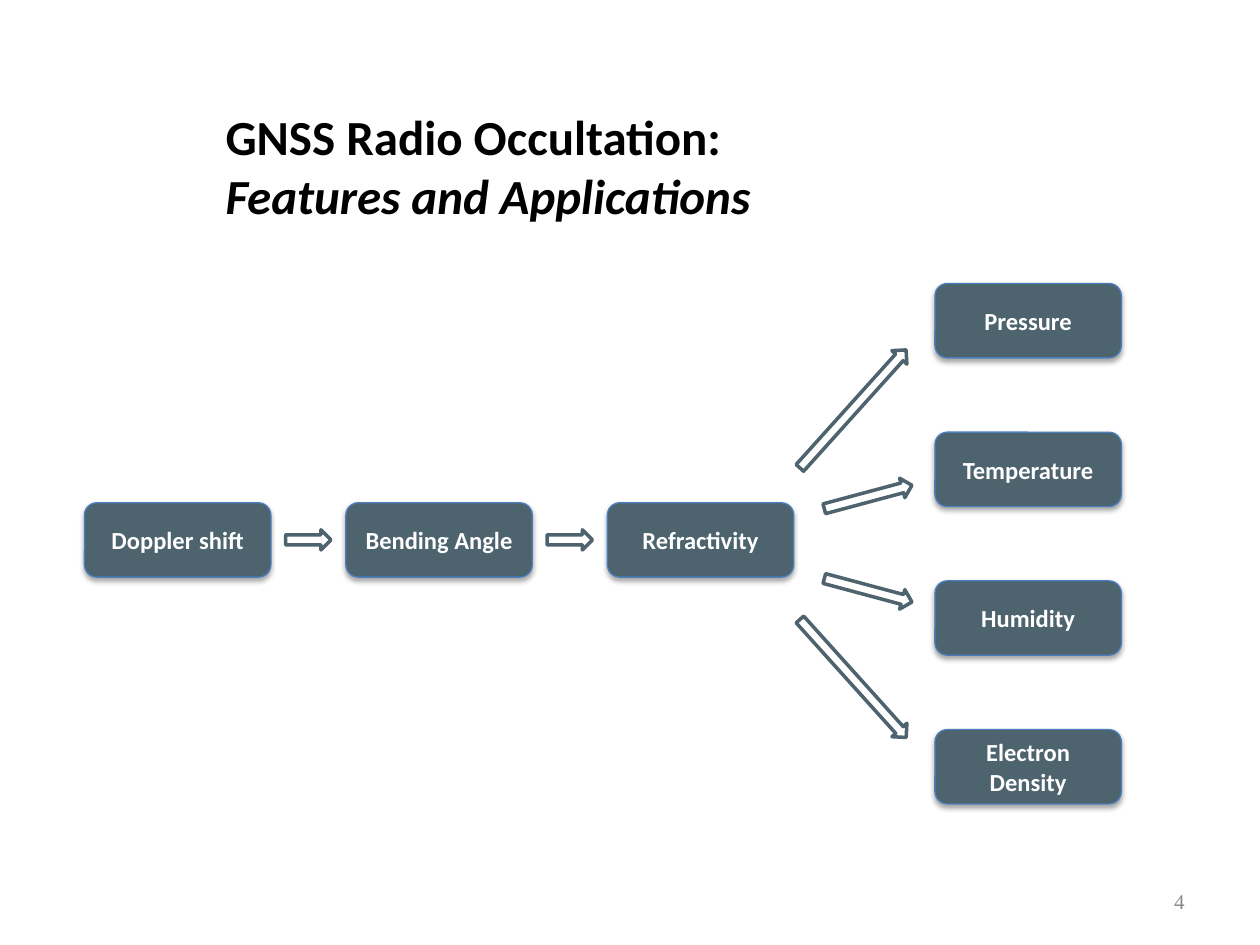
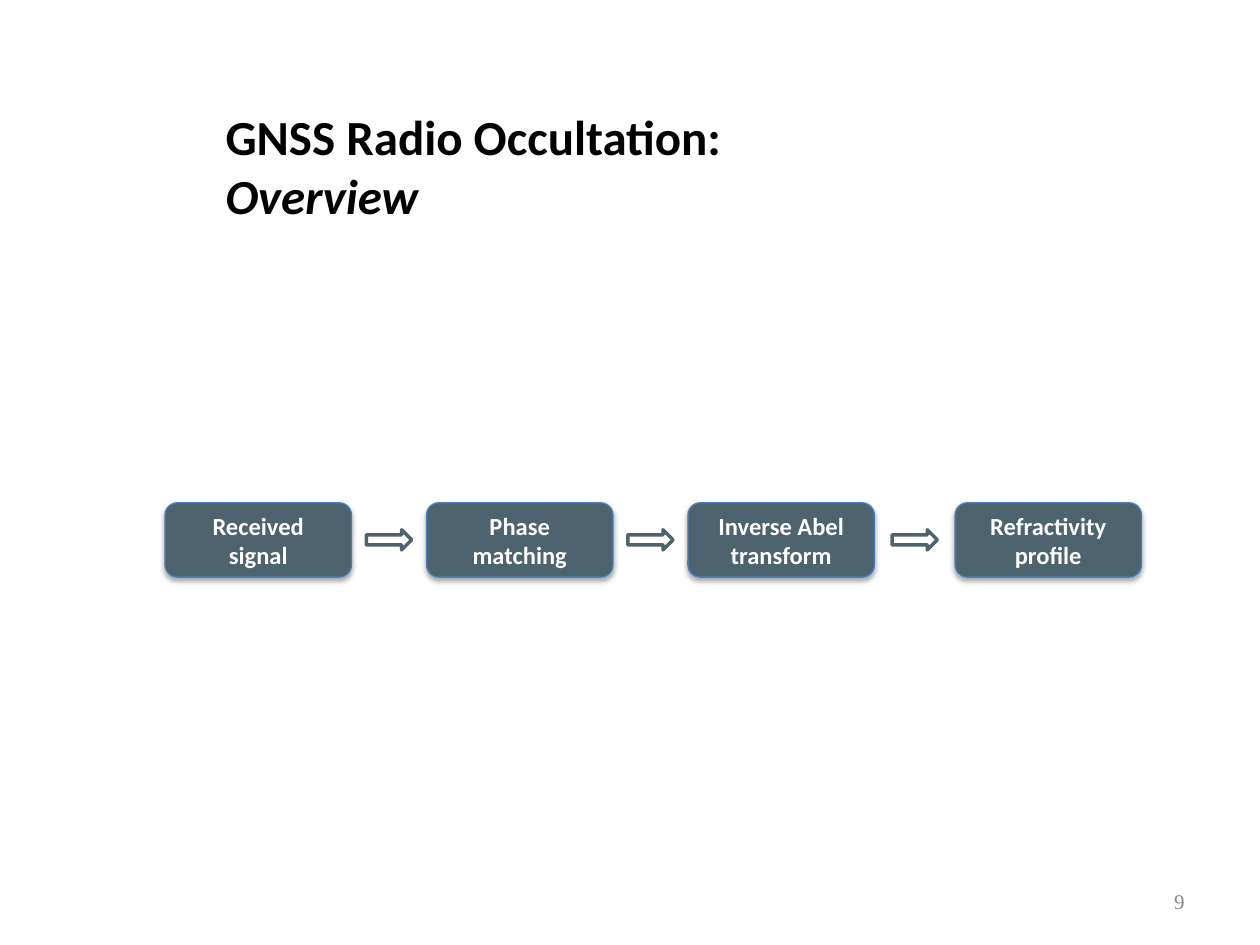
from lxml import etree
from pptx import Presentation
from pptx.dml.color import RGBColor
from pptx.enum.shapes import MSO_SHAPE
from pptx.enum.text import MSO_ANCHOR, MSO_AUTO_SIZE, PP_ALIGN
from pptx.oxml.ns import qn
from pptx.util import Inches, Pt

ROUND, ARROW = MSO_SHAPE.ROUNDED_RECTANGLE, MSO_SHAPE.RIGHT_ARROW
MIDDLE, FIXED = MSO_ANCHOR.MIDDLE, MSO_AUTO_SIZE.NONE
LEFT, CENTER, RIGHT = PP_ALIGN.LEFT, PP_ALIGN.CENTER, PP_ALIGN.RIGHT

SLATE, BLUE, WHITE, BLACK, GRAY = "4D636D", "4B7EBC", "FFFFFF", "000000", "898989"
SANS, SERIF = "Calibri", "Times New Roman"
BOX_W, BOX_H = 1.48, 0.59
COL = 4.15 / 2
ROW = 1.18
CHAIN_TOP = 3.99
FAN_LEFT, FAN_TOP = 7.42, 2.25


def color(code):
    """Turn a hex string into a colour."""
    return RGBColor.from_string(code)


def place(shape, *frame):
    """Set left, top, width and height in inches."""
    shape.left, shape.top, shape.width, shape.height = map(Inches, frame)


def write(shape, text, size, font, tint, align, bold=False):
    """Fill a shape with one styled, vertically centred paragraph."""
    frame = shape.text_frame
    frame.word_wrap = True
    frame.auto_size = FIXED
    frame.vertical_anchor = MIDDLE
    para = frame.paragraphs[0]
    para.text = text
    para.alignment = align
    for run in para.runs:
        run.font.size = Pt(size)
        run.font.name = font
        run.font.bold = bold
        run.font.color.rgb = color(tint)
    return para


def paint(shape, fill, line, width):
    """Give a shape a plain fill and outline without a shadow."""
    shape.shadow.inherit = False
    shape.fill.solid()
    shape.fill.fore_color.rgb = color(fill)
    shape.line.color.rgb = color(line)
    shape.line.width = Pt(width)


def shade(shape):
    """Add a soft shadow below a shape."""
    effects = shape.element.spPr.find(qn("a:effectLst"))
    outer = etree.SubElement(effects, qn("a:outerShdw"), blurRad=str(Pt(3.1)),
                             dist=str(Pt(1.8)), dir="5400000", rotWithShape="0")
    tint = etree.SubElement(outer, qn("a:srgbClr"), val=BLACK)
    etree.SubElement(tint, qn("a:alpha"), val="35000")


def add_box(slide, text, left, top):
    """Draw one labelled step box."""
    box = slide.shapes.add_shape(ROUND, 0, 0, 0, 0)
    place(box, left, top, BOX_W, BOX_H)
    paint(box, SLATE, BLUE, 0.75)
    shade(box)
    box.text_frame.margin_left = box.text_frame.margin_right = Inches(0.11)
    write(box, text, 14, SANS, WHITE, CENTER, True)


def add_arrow(slide, x, y, length, angle=0):
    """Draw a block arrow around a centre point."""
    arrow = slide.shapes.add_shape(ARROW, 0, 0, 0, 0)
    place(arrow, x - length / 2, y - 0.08, length, 0.16)
    arrow.rotation = angle
    paint(arrow, WHITE, SLATE, 2)


def add_chain(slide, labels, lefts):
    """Draw a row of boxes with an arrow centred in each gap."""
    for label, left in zip(labels, lefts):
        add_box(slide, label, left, CHAIN_TOP)
    for left, after in zip(lefts, lefts[1:]):
        add_arrow(slide, (left + BOX_W + after) / 2, CHAIN_TOP + BOX_H / 2, 0.36)


def add_fan(slide, labels):
    """Draw a column of boxes with arrows spreading out to them."""
    for row, label in enumerate(labels):
        add_box(slide, label, FAN_LEFT, FAN_TOP + row * ROW)
    middle = FAN_TOP + ((len(labels) - 1) * ROW + BOX_H) / 2
    for x, rise, length, angle in ((6.77, 1.07, 1.26, 48), (6.89, 0.37, 0.72, 15)):
        for sign in (-1, 1):
            add_arrow(slide, x, middle + sign * rise, length, sign * angle)


def add_slide(deck, topic, number):
    """Start a slide with its title and page number."""
    slide = deck.slides.add_slide(deck.slide_layouts[5])
    title = slide.shapes.title
    place(title, 1.69, 0.92, 6.67, 0.79)
    para = write(title, f"GNSS Radio Occultation:\n{topic}", 28, SANS, BLACK, LEFT, True)
    para.runs[-1].font.italic = True
    page = slide.shapes.add_textbox(0, 0, 0, 0)
    place(page, 7.17, 6.95, 2.33, 0.4)
    write(page, number, 12, SERIF, GRAY, RIGHT)
    return slide


def main():
    """Build both slides and save the deck."""
    deck = Presentation()
    deck.slide_width, deck.slide_height = Inches(10), Inches(7.5)

    slide = add_slide(deck, "Features and Applications", "4")
    add_chain(slide, ("Doppler shift", "Bending Angle", "Refractivity"),
              [0.67 + i * COL for i in range(3)])
    add_fan(slide, ("Pressure", "Temperature", "Humidity", "Electron Density"))

    slide = add_slide(deck, "Overview", "9")
    add_chain(slide, ("Received signal", "Phase matching",
                      "Inverse Abel transform", "Refractivity profile"),
              [1.31 + i * COL for i in range(3)] + [7.58])

    deck.save("out.pptx")


if __name__ == "__main__":
    main()
